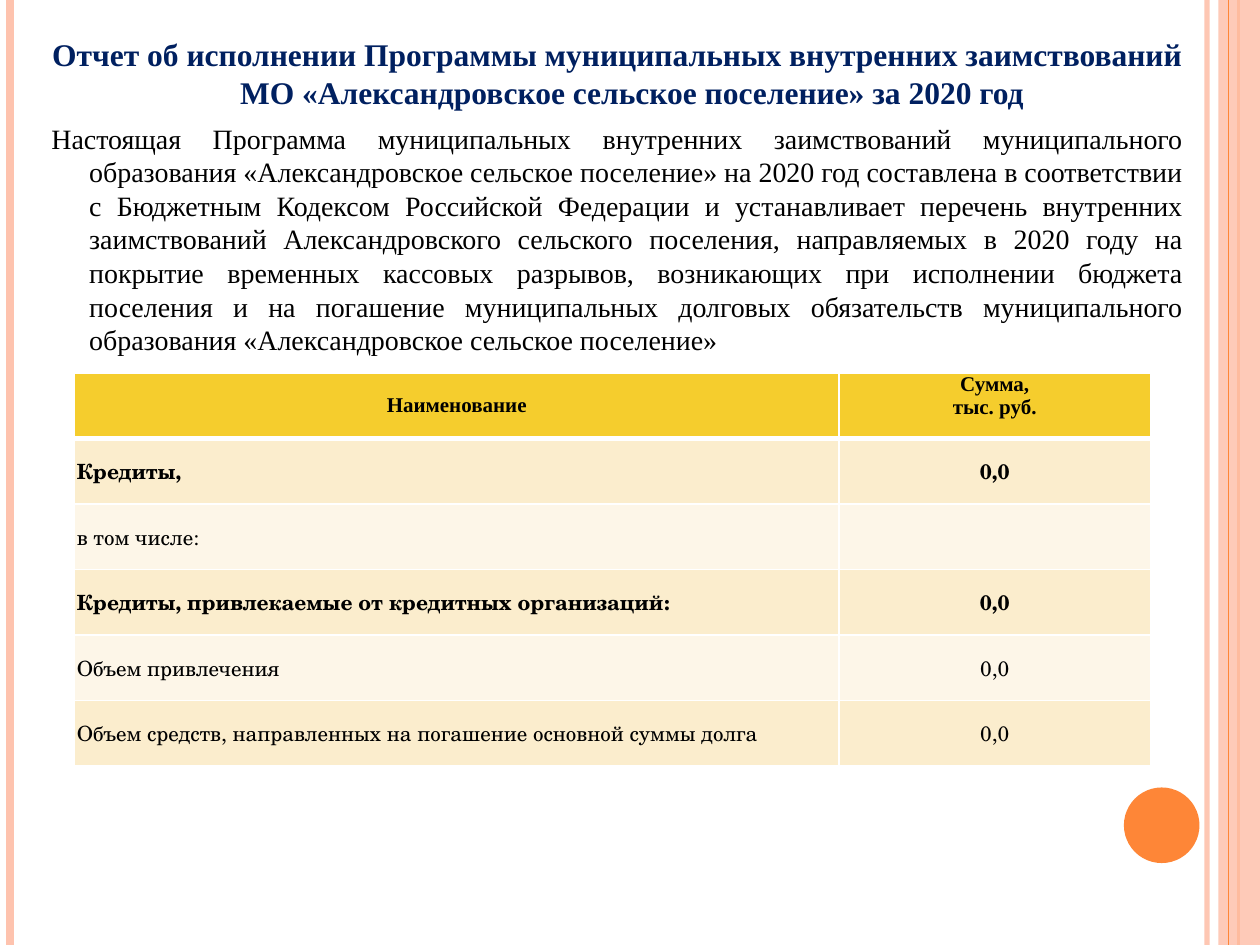
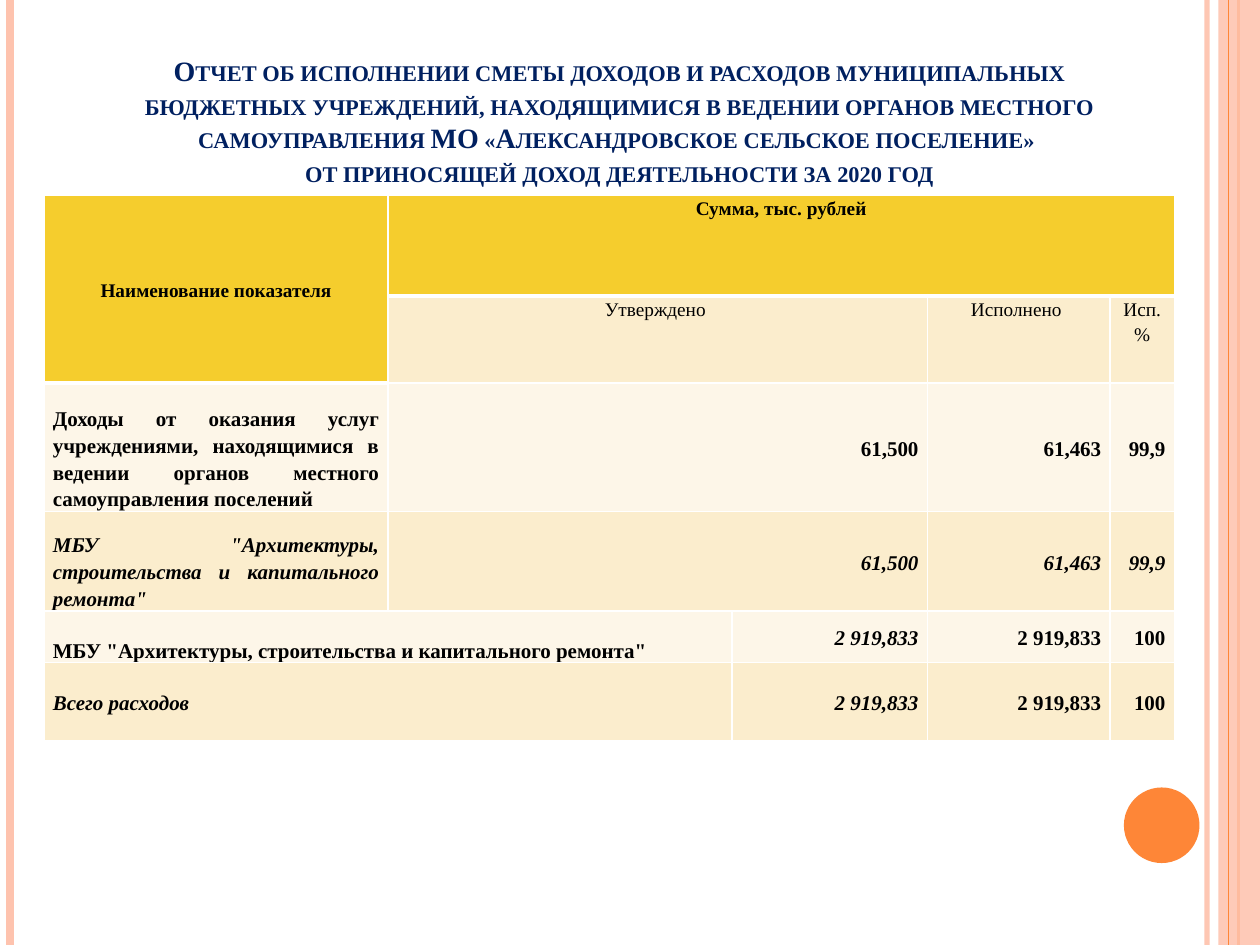
from dataclasses import dataclass

from lxml import etree
from pptx import Presentation
from pptx import util as u
from pptx.dml.color import RGBColor
from pptx.enum import shapes, text
from pptx.oxml.ns import qn

# Shared style
WHITE = RGBColor(0xFF, 0xFF, 0xFF)
BLACK = RGBColor(0, 0, 0)
NAVY = RGBColor(0x00, 0x20, 0x60)
PEACH = RGBColor(0xFE, 0xC3, 0xAE)
ORANGE = RGBColor(0xFE, 0x86, 0x37)
HEADER_FILL = RGBColor(0xF5, 0xCD, 0x2D)
BAND_FILLS = (RGBColor(0xFD, 0xF6, 0xE8), RGBColor(0xFB, 0xED, 0xCD))
SERIF = "Times New Roman"
SCHOOL = "TeX Gyre Schola"
LEFT, CENTER = text.PP_ALIGN.LEFT, text.PP_ALIGN.CENTER
RIGHT, JUSTIFY = text.PP_ALIGN.RIGHT, text.PP_ALIGN.JUSTIFY
TOP, MIDDLE, BOTTOM = text.MSO_ANCHOR.TOP, text.MSO_ANCHOR.MIDDLE, text.MSO_ANCHOR.BOTTOM


@dataclass
class Cell:
    text: str
    align: int = RIGHT
    bold: bool = True
    italic: bool = False
    anchor: int = MIDDLE
    size: int = 12
    font: str = SERIF
    hanging: float = 0


class Deck:
    def __init__(self):
        self.presentation = Presentation()
        self.presentation.slide_width = u.Inches(10)
        self.presentation.slide_height = u.Inches(7.5)
        self.slide = None

    def new_slide(self):
        self.slide = self.presentation.slides.add_slide(self.presentation.slide_layouts[6])
        self.slide.background.fill.solid()
        self.slide.background.fill.fore_color.rgb = WHITE
        # Side stripes and corner circle
        self.stripe(9.58, PEACH, 3, 93)
        self.stripe(0.08, PEACH, 4.5)
        self.stripe(9.83, ORANGE, 1.5)
        self.shape(shapes.MSO_SHAPE.RECTANGLE, (9.67, 0, 0.33, 7.5), PEACH, 87)
        self.stripe(9.75, ORANGE, 0.75)
        self.shape(shapes.MSO_SHAPE.OVAL, (8.92, 6.25, 0.6, 0.6), ORANGE)

    def set_opacity(self, shape, percent):
        for color in shape._element.iter(qn("a:srgbClr")):
            etree.SubElement(color, qn("a:alpha"), val=str(percent * 1000))

    def stripe(self, x, color, width, opacity=100):
        line = self.slide.shapes.add_connector(
            shapes.MSO_CONNECTOR.STRAIGHT, u.Inches(x), 0, u.Inches(x), u.Inches(7.5))
        line.line.color.rgb = color
        line.line.width = u.Pt(width)
        etree.SubElement(line._element.spPr, qn("a:effectLst"))
        if opacity < 100:
            self.set_opacity(line, opacity)

    def shape(self, kind, box, color, opacity=100):
        shape = self.slide.shapes.add_shape(kind, *map(u.Inches, box))
        shape.shadow.inherit = False
        shape.fill.solid()
        shape.fill.fore_color.rgb = color
        shape.line.fill.background()
        if opacity < 100:
            self.set_opacity(shape, opacity)

    def text_box(self, box, anchor=TOP):
        frame = self.slide.shapes.add_textbox(*map(u.Inches, box)).text_frame
        frame.word_wrap = True
        frame.vertical_anchor = anchor
        return frame

    def set_text(self, paragraph, words, align, size, color=BLACK, bold=False,
                 italic=False, font=SERIF, hanging=0, small_caps=False):
        paragraph.text = words
        paragraph.alignment = align
        if hanging:
            properties = paragraph._p.get_or_add_pPr()
            properties.set("marL", str(u.Inches(hanging)))
            properties.set("indent", str(-u.Inches(hanging)))
        for run in paragraph.runs:
            run.font.size = u.Pt(size)
            run.font.name = font
            run.font.bold = bold
            run.font.italic = italic
            run.font.color.rgb = color
            if small_caps:
                run._r.get_or_add_rPr().set("cap", "small")

    def border(self, cell, side, width):
        line = etree.SubElement(cell._tc.get_or_add_tcPr(), qn(f"a:ln{side}"), w=str(u.Pt(width)))
        fill = etree.SubElement(line, qn("a:solidFill"))
        etree.SubElement(fill, qn("a:srgbClr"), val=str(WHITE))

    def table(self, box, columns, heights, rows, inset, spacing=1.0, spans=()):
        """Each span is (row, column, rows, columns); None marks a cell without text."""
        table = self.slide.shapes.add_table(
            len(heights), len(columns), *map(u.Inches, box)).table
        table.first_row = table.horz_banding = False
        for column, width in zip(table.columns, columns):
            column.width = u.Inches(width)
        for row, height in zip(table.rows, heights):
            row.height = u.Inches(height)
        header_cells = {(0, c) for c in range(len(columns))}
        for r, c, height, width in spans:
            table.cell(r, c).merge(table.cell(r + height - 1, c + width - 1))
            if r == 0:
                header_cells |= {(i, c) for i in range(height)}

        for r, row in enumerate(rows):
            for c, content in enumerate(row):
                cell = table.cell(r, c)
                header = (r, c) in header_cells
                self.border(cell, "L", 1)
                self.border(cell, "R", 1)
                if r == 0:
                    self.border(cell, "T", 1)
                self.border(cell, "B", 3 if header else 1)
                cell.fill.solid()
                cell.fill.fore_color.rgb = HEADER_FILL if header else BAND_FILLS[r % 2]
                if content:
                    self.fill_cell(cell, content, inset, spacing)

    def fill_cell(self, cell, content, inset, spacing):
        cell.margin_left = cell.margin_right = u.Inches(inset)
        cell.margin_top = cell.margin_bottom = 0
        cell.vertical_anchor = content.anchor
        cell.text_frame.text = content.text
        for paragraph in cell.text_frame.paragraphs:
            self.set_text(paragraph, paragraph.text, content.align, content.size,
                          bold=content.bold, italic=content.italic,
                          font=content.font, hanging=content.hanging)
            paragraph.line_spacing = spacing


def borrowing_slide(deck):
    deck.new_slide()
    # Heading and introduction
    frame = deck.text_box((0.31, 0.23, 9.18, 2.7))
    heading, introduction = frame.paragraphs[0], frame.add_paragraph()
    deck.set_text(heading, "Отчет об исполнении Программы муниципальных внутренних заимствований "
                  "МО «Александровское сельское поселение» за 2020 год ",
                  CENTER, 18, NAVY, bold=True, hanging=0.3)
    deck.set_text(introduction, "Настоящая Программа муниципальных внутренних заимствований "
                  "муниципального образования «Александровское сельское поселение» на 2020 год "
                  "составлена в соответствии с Бюджетным Кодексом Российской Федерации и "
                  "устанавливает перечень внутренних заимствований Александровского сельского "
                  "поселения, направляемых в 2020 году на покрытие временных кассовых разрывов, "
                  "возникающих при исполнении бюджета поселения и на погашение муниципальных "
                  "долговых обязательств муниципального образования «Александровское сельское "
                  "поселение»", JUSTIFY, 16, hanging=0.3)
    for paragraph in frame.paragraphs:
        paragraph.space_before = u.Pt(6)

    # Loans table
    loans = [
        ("Кредиты,", "0,0", True),
        ("в том числе:", None, False),
        ("Кредиты, привлекаемые от кредитных организаций:", "0,0", True),
        ("Объем привлечения", "0,0", False),
        ("Объем средств, направленных на погашение основной суммы долга", "0,0", False),
    ]
    rows = [[Cell("Наименование", CENTER), Cell("Сумма,\nтыс. руб.", CENTER, anchor=TOP)]]
    for name, amount, bold in loans:
        rows.append([Cell(name, LEFT, bold, font=SCHOOL),
                     amount and Cell(amount, CENTER, bold, font=SCHOOL)])
    deck.table((0.59, 2.96, 8.54, 3.12), (6.07, 2.47), [0.52] * 6, rows, inset=0.02)


def institutions_slide(deck):
    deck.new_slide()
    # Title
    frame = deck.text_box((0.83, 0.29, 8.17, 1.25), BOTTOM)
    deck.set_text(frame.paragraphs[0], "Отчет об исполнении сметы доходов и расходов "
                  "муниципальных бюджетных учреждений, находящимися в ведении органов местного "
                  "самоуправления МО «Александровское сельское поселение» \v"
                  "от приносящей доход деятельности за 2020 год",
                  CENTER, 16, NAVY, bold=True, small_caps=True)

    # Income and spending table
    institution = 'МБУ "Архитектуры, строительства и капитального ремонта" '
    total = "2 919,833"

    def column_label(words, hanging=0):
        return Cell(words, CENTER, False, anchor=TOP, size=11, hanging=hanging)

    def income(name, italic):
        approved, done, share = (Cell(value, italic=italic)
                                 for value in ("61,500", "61,463", "99,9"))
        return [Cell(name, JUSTIFY, italic=italic, anchor=BOTTOM), approved, None, done, share]

    def spending(name):
        return [name, None, Cell(total, italic=True), Cell(total), Cell("100")]

    rows = [
        [Cell("Наименование показателя", CENTER, size=11),
         Cell("Сумма, тыс. рублей", CENTER, anchor=TOP, size=11), None, None, None],
        [None, column_label("Утверждено "), None,
         column_label("Исполнено ", 0.12), column_label("Исп. %")],
        income("Доходы от оказания услуг учреждениями, находящимися в ведении "
               "органов местного самоуправления поселений", False),
        income(institution, True),
        spending(Cell(institution, JUSTIFY, anchor=BOTTOM)),
        spending(Cell("Всего расходов", LEFT, italic=True)),
    ]
    spans = [(0, 0, 2, 1), (0, 1, 1, 4)]
    spans += [(r, 1, 1, 2) for r in (1, 2, 3)] + [(r, 0, 1, 2) for r in (4, 5)]
    deck.table((0.35, 1.55, 8.97, 4.33), (2.73, 2.73, 1.55, 1.45, 0.51),
               (0.8, 0.69, 1.02, 0.79, 0.41, 0.62), rows, 0.07, 1.15, spans)


def main():
    deck = Deck()
    borrowing_slide(deck)
    institutions_slide(deck)
    deck.presentation.save("out.pptx")


if __name__ == "__main__":
    main()
